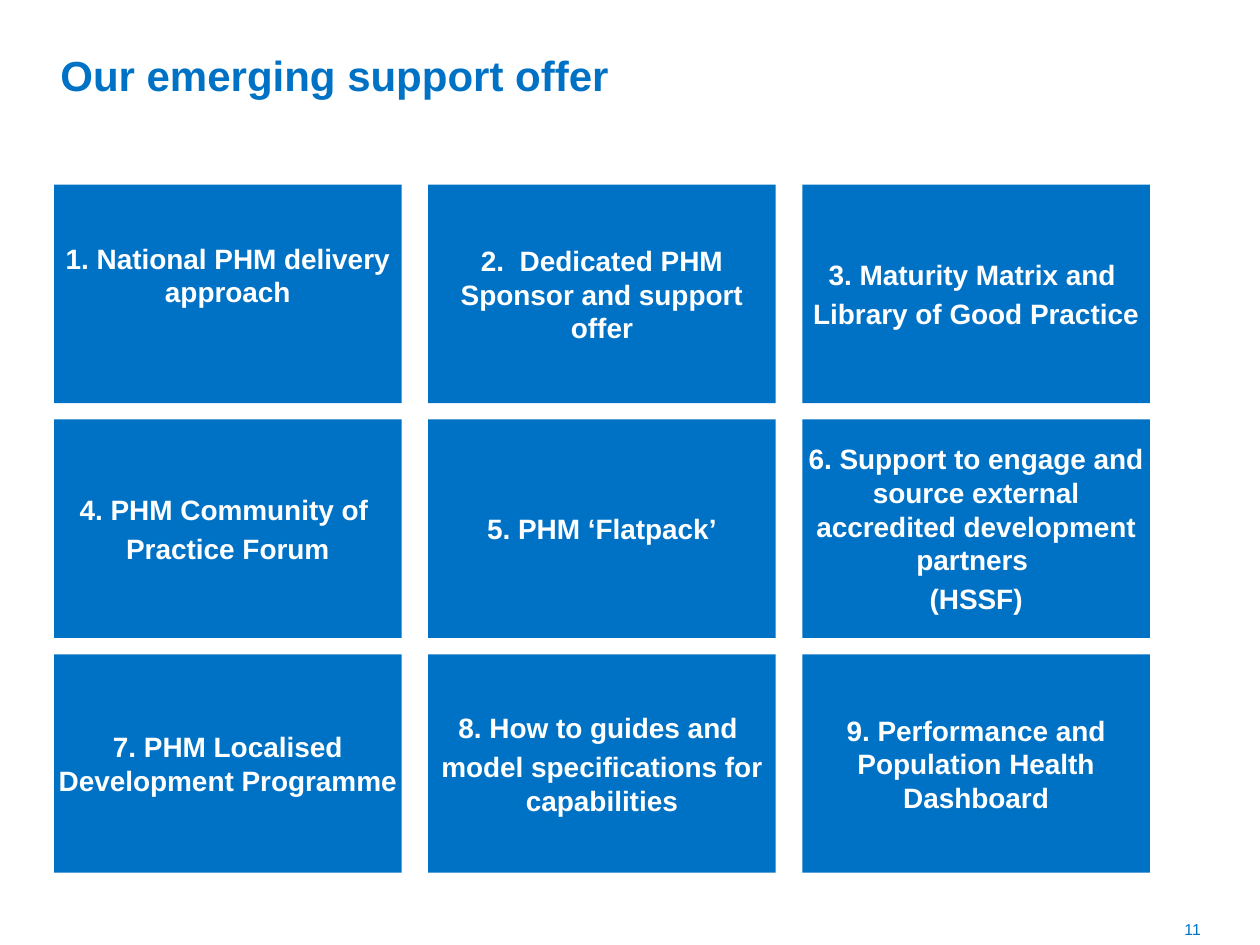
"""Build the slide that lists the nine parts of the support offer."""
from pptx import Presentation
from pptx.dml.color import RGBColor
from pptx.enum.shapes import MSO_SHAPE as SHAPE
from pptx.enum.text import MSO_ANCHOR as ANCHOR, PP_ALIGN as ALIGN
from pptx.util import Pt

BLUE, WHITE = "0072C6", "FFFFFF"
LEFT, TOP, WIDTH, HEIGHT = 30.9, 105.5, 198.6, 124.8
STEP_X, STEP_Y = 213.8, 134.2
COLUMNS = 3
BLANK_LINE = 21.6
OFFERS = [
    ["1. National PHM delivery approach"],
    ["2.  Dedicated PHM Sponsor and support offer"],
    ["3. Maturity Matrix and ", "Library of Good Practice"],
    ["4. PHM Community of ", "Practice Forum"],
    ["5. PHM ‘Flatpack’"],
    ["6. Support to engage and source external accredited development partners ", "(HSSF)"],
    ["7. PHM Localised Development Programme"],
    ["8. How to guides and ", "model specifications for capabilities"],
    ["9. Performance and Population Health Dashboard"],
]


def rgb(color):
    return RGBColor.from_string(color)


def write(sp, lines, size, color, align, anchor, bold=True, wrap=True, bottom=0):
    tf = sp.text_frame
    tf.word_wrap = wrap
    tf.vertical_anchor = anchor
    tf.margin_left = tf.margin_right = tf.margin_top = 0
    tf.margin_bottom = Pt(bottom)
    for i, line in enumerate(lines):
        p = tf.add_paragraph() if i else tf.paragraphs[0]
        p.alignment = align
        if i:
            p.space_before = Pt(size * 0.2)
        r = p.add_run()
        r.text = line
        r.font.name, r.font.size, r.font.bold = "Arial", Pt(size), bold
        r.font.color.rgb = rgb(color)


def add_label(s, box, text, size, align, anchor, **options):
    sp = s.shapes.add_textbox(*map(Pt, box))
    write(sp, [text], size, BLUE, align, anchor, **options)


def add_tile(s, index, lines):
    row, col = divmod(index, COLUMNS)
    sp = s.shapes.add_shape(SHAPE.RECTANGLE, Pt(LEFT + col * STEP_X),
                            Pt(TOP + row * STEP_Y), Pt(WIDTH), Pt(HEIGHT))
    sp.shadow.inherit = False
    sp.fill.solid()
    sp.fill.fore_color.rgb = rgb(BLUE)
    sp.line.fill.background()
    write(sp, lines, 16, WHITE, ALIGN.CENTER, ANCHOR.MIDDLE,
          bottom=0 if index else BLANK_LINE)


def main():
    prs = Presentation()
    prs.slide_width, prs.slide_height = Pt(720), Pt(540)
    s = prs.slides.add_slide(prs.slide_layouts[6])
    add_label(s, (34.5, 12.2, 608.4, 48.2), "Our emerging support offer", 24,
              ALIGN.LEFT, ANCHOR.BOTTOM, bottom=3.6)
    for index, lines in enumerate(OFFERS):
        add_tile(s, index, lines)
    add_label(s, (672.5, 525.6, 13.7, 10.1), "11", 9, ALIGN.RIGHT, ANCHOR.TOP,
              bold=False, wrap=False)
    prs.save("out.pptx")


if __name__ == "__main__":
    main()
